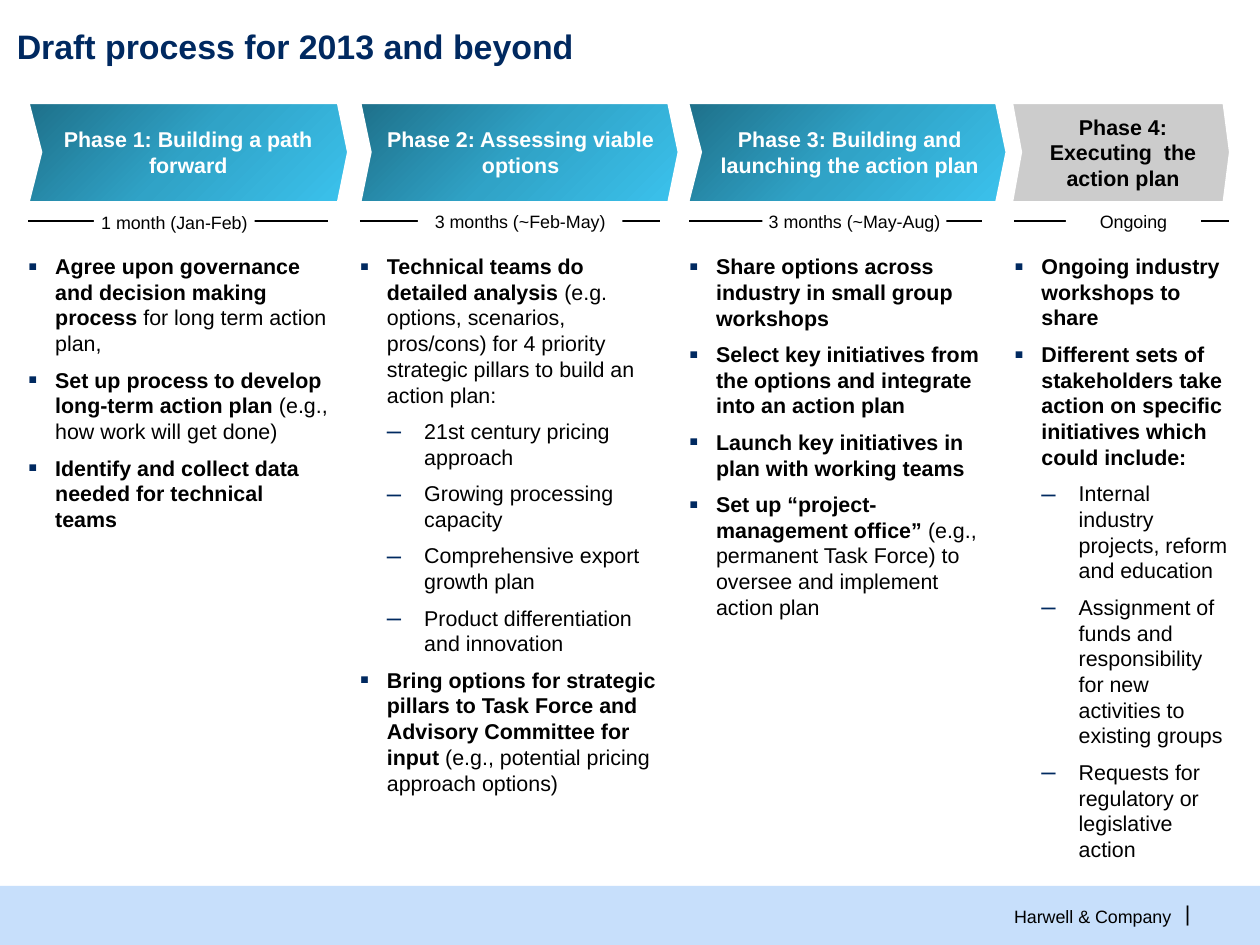
from copy import deepcopy
from lxml.etree import SubElement
from pptx import Presentation
from pptx.dml.color import RGBColor
from pptx.enum.shapes import MSO_CONNECTOR as CONN, MSO_SHAPE as SHAPE
from pptx.enum.text import MSO_ANCHOR as ANCHOR, PP_ALIGN as ALIGN
from pptx.oxml.ns import qn
from pptx.util import Pt

NAVY = RGBColor(0x00, 0x29, 0x60)
BLACK = RGBColor(0x00, 0x00, 0x00)
WHITE = RGBColor(0xFF, 0xFF, 0xFF)
GRAY = RGBColor(0xCC, 0xCC, 0xCC)
PALE_BLUE = RGBColor(0xC7, 0xDF, 0xFB)
TEAL = RGBColor(0x1E, 0x70, 0x8A)
MID_BLUE = RGBColor(0x30, 0xA3, 0xC7)
SKY = RGBColor(0x3B, 0xC2, 0xED)
BLUES = ((0, TEAL), (0.5, MID_BLUE), (1, SKY))

TITLE = "Draft process for 2013 and beyond"
FOOTER = "Harwell & Company"

# level, bold text, regular text
PHASES = [
    {
        "name": "Phase 1: Building a path forward", "time": "1 month (Jan-Feb)",
        "arrow": (15.84, 23, 189.4, 195.1), "head": (27.4, 156.2),
        "label": (52.6, 118.8, 90), "body": (15.84, 167.8, 172),
        "items": [
            (1, "Agree upon governance and decision making process ",
             "for long term action plan,"),
            (1, "Set up process to develop long-term action plan",
             " (e.g., how work will get done)"),
            (1, "Identify and collect data needed for technical teams", ""),
        ],
    },
    {
        "name": "Phase 2: Assessing viable options", "time": "3 months (~Feb-May)",
        "arrow": (201.6, 207.4, 374.4, 380.2), "head": (205.2, 172.8),
        "label": (234, 118.1, 114.5), "body": (201.6, 167.8, 327),
        "items": [
            (1, "Technical teams do detailed analysis ",
             "(e.g. options, scenarios, pros/cons) for 4 priority strategic "
             "pillars to build an action plan:"),
            (2, "", "21st century pricing approach"),
            (2, "", "Growing processing capacity"),
            (2, "", "Comprehensive export growth plan"),
            (2, "", "Product differentiation and innovation"),
            (1, "Bring options for strategic pillars to Task Force and "
             "Advisory Committee for input ",
             "(e.g., potential pricing approach options)"),
        ],
    },
    {
        "name": "Phase 3: Building and launching the action plan",
        "time": "3 months (~May-Aug)",
        "arrow": (385.2, 392.4, 558, 563.8), "head": (401.8, 148.3),
        "label": (427, 118.1, 103), "body": (385.9, 164.2, 207),
        "items": [
            (1, "Share options across industry in small group workshops", ""),
            (1, "Select key initiatives from the options and integrate into "
             "an action plan", ""),
            (1, "Launch key initiatives in plan with working teams", ""),
            (1, "Set up “project-management office” ",
             "(e.g., permanent Task Force) to oversee and implement action plan"),
        ],
    },
    {
        "name": "Phase 4: Executing  the action plan", "time": "Ongoing",
        "arrow": (566.6, 571.7, 685.4, 689), "head": (583.9, 90),
        "label": (596.9, 118.1, 75.6), "body": (568.1, 120.4, 344),
        "items": [
            (1, "Ongoing industry workshops to share", ""),
            (1, "Different sets of stakeholders take action on specific "
             "initiatives which could include:", ""),
            (2, "", "Internal industry projects, reform and education"),
            (2, "", "Assignment of funds and responsibility for new "
             "activities to existing groups"),
            (2, "", "Requests for regulatory or legislative action"),
        ],
    },
]
BULLETS = {1: ("▪", 15.1, 15.1, 125), 2: ("–", 36, 20.9, 120)}
ARROW_TOP, ARROW_MID, ARROW_BOTTOM = 57.6, 85.2, 113.4
HEAD_TOP, HEAD_H = 61.2, 48.2
LINE_Y, LABEL_H, BODY_TOP = 123.8, 12.2, 141.8

prs = Presentation()
prs.slide_width, prs.slide_height = Pt(705.6), Pt(529.2)
shapes = prs.slides.add_slide(prs.slide_layouts[6]).shapes


def add_run(p, text, size, color=BLACK, bold=False):
    r = p.add_run()
    r.text = text
    r.font.name, r.font.size, r.font.bold = "Arial", Pt(size), bold
    r.font.color.rgb = color


def clear_margins(sp, anchor=ANCHOR.TOP, wrap=True):
    tf = sp.text_frame
    tf.margin_left = tf.margin_right = tf.margin_top = tf.margin_bottom = 0
    tf.vertical_anchor, tf.word_wrap = anchor, wrap
    return tf


def add_text(box, text, size, color=BLACK, bold=False, align=ALIGN.LEFT,
             anchor=ANCHOR.MIDDLE, wrap=True):
    tf = clear_margins(shapes.add_textbox(*map(Pt, box)), anchor, wrap)
    p = tf.paragraphs[0]
    p.alignment = align
    add_run(p, text, size, color, bold)


def add_rect(box, color):
    sp = shapes.add_shape(SHAPE.RECTANGLE, *map(Pt, box))
    sp.shadow.inherit = False
    sp.fill.solid()
    sp.fill.fore_color.rgb = color
    sp.line.fill.background()
    return sp


def add_arrow(left, notch, shoulder, tip, blue):
    points = [(shoulder, ARROW_TOP), (tip, ARROW_MID), (shoulder, ARROW_BOTTOM),
              (left, ARROW_BOTTOM), (notch, ARROW_MID)]
    fb = shapes.build_freeform(Pt(left), Pt(ARROW_TOP))
    fb.add_line_segments([(Pt(x), Pt(y)) for x, y in points], close=True)
    sp = fb.convert_to_shape()
    sp.shadow.inherit = False
    sp.line.color.rgb, sp.line.width = WHITE, Pt(1.5)
    if not blue:
        sp.fill.solid()
        sp.fill.fore_color.rgb = GRAY
        return
    sp.fill.gradient()
    sp.fill.gradient_angle = 315
    first = next(sp._element.spPr.iter(qn("a:gs")))
    first.addnext(deepcopy(first))
    for stop, (position, color) in zip(sp.fill.gradient_stops, BLUES):
        stop.position, stop.color.rgb = position, color


def add_rule(left, width):
    line = shapes.add_connector(CONN.STRAIGHT, Pt(left), Pt(LINE_Y),
                                Pt(left + width), Pt(LINE_Y))
    line.line.color.rgb, line.line.width = BLACK, Pt(0.75)
    SubElement(line._element.spPr, qn("a:effectLst"))


def set_bullet(p, level):
    char, margin, hang, percent = BULLETS[level]
    p.level, p.space_after = level, Pt(6)
    pPr = p._p.get_or_add_pPr()
    pPr.set("marL", str(Pt(margin)))
    pPr.set("indent", str(-Pt(hang)))
    color = SubElement(pPr, qn("a:buClr"))
    SubElement(color, qn("a:srgbClr"), val=str(NAVY))
    SubElement(pPr, qn("a:buSzPct"), val=str(percent * 1000))
    SubElement(pPr, qn("a:buFont"), typeface="Arial")
    SubElement(pPr, qn("a:buChar"), char=char)


def add_body(left, width, height, items):
    tf = clear_margins(shapes.add_textbox(Pt(left), Pt(BODY_TOP), Pt(width), Pt(height)))
    for i, (level, strong, plain) in enumerate(items):
        p = tf.add_paragraph() if i else tf.paragraphs[0]
        set_bullet(p, level)
        for text, bold in ((strong, True), (plain, False)):
            if text:
                add_run(p, text, 12, bold=bold)


add_rect((0, 496.1, 705.6, 33.1), PALE_BLUE)
add_text((558, 506.9, 97.9, 12.2), FOOTER, 10, align=ALIGN.RIGHT, wrap=False)
add_text((663.1, 504, 3.6, 14.4), "|", 12, align=ALIGN.RIGHT, wrap=False)
add_text((9.4, 14.4, 679, 23), TITLE, 19, NAVY, True, anchor=ANCHOR.TOP)

for phase in PHASES:
    blue = phase is not PHASES[-1]
    add_arrow(*phase["arrow"], blue)
    left, width = phase["head"]
    add_text((left, HEAD_TOP, width, HEAD_H), phase["name"], 12,
             WHITE if blue else BLACK, True, ALIGN.CENTER)
    left, width, height = phase["body"]
    add_rule(left, width)
    label = add_rect((*phase["label"], LABEL_H), WHITE)
    p = clear_margins(label).paragraphs[0]
    p.alignment = ALIGN.CENTER
    add_run(p, phase["time"], 10)
    add_body(left, width, height, phase["items"])

prs.save("out.pptx")
